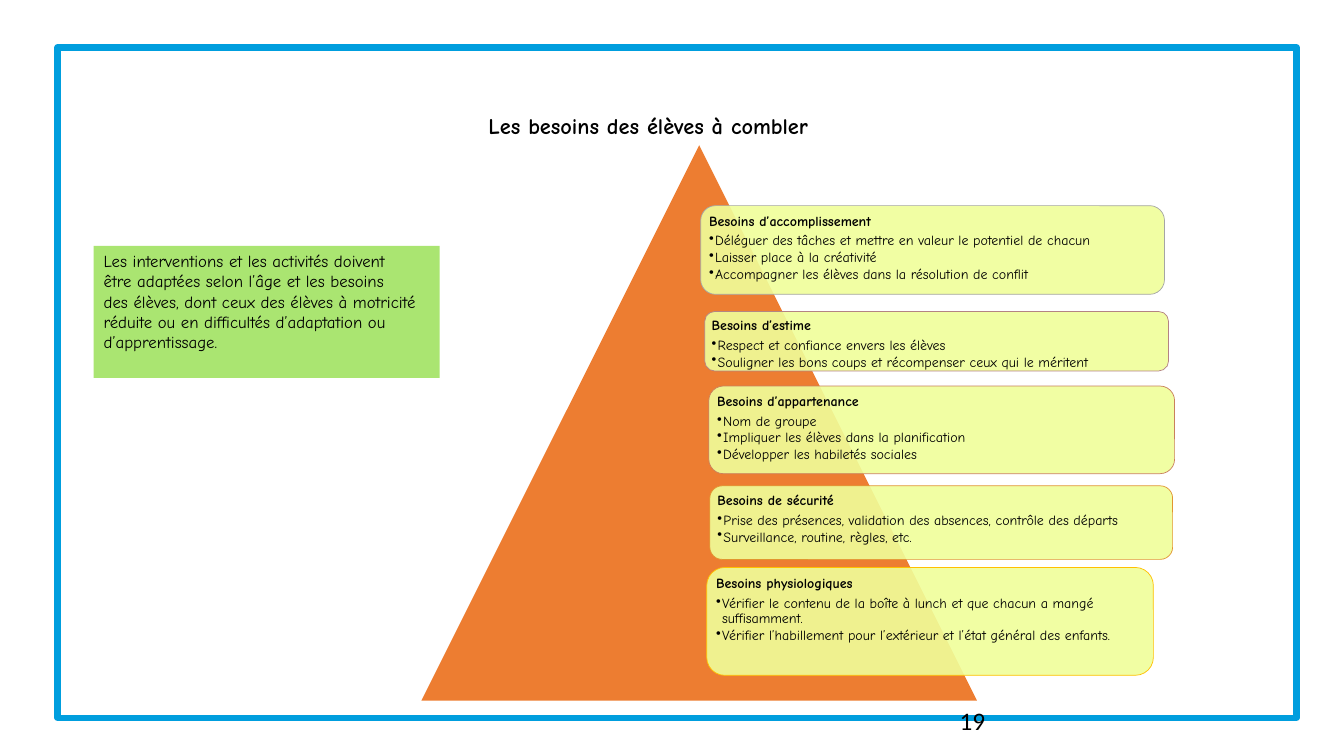
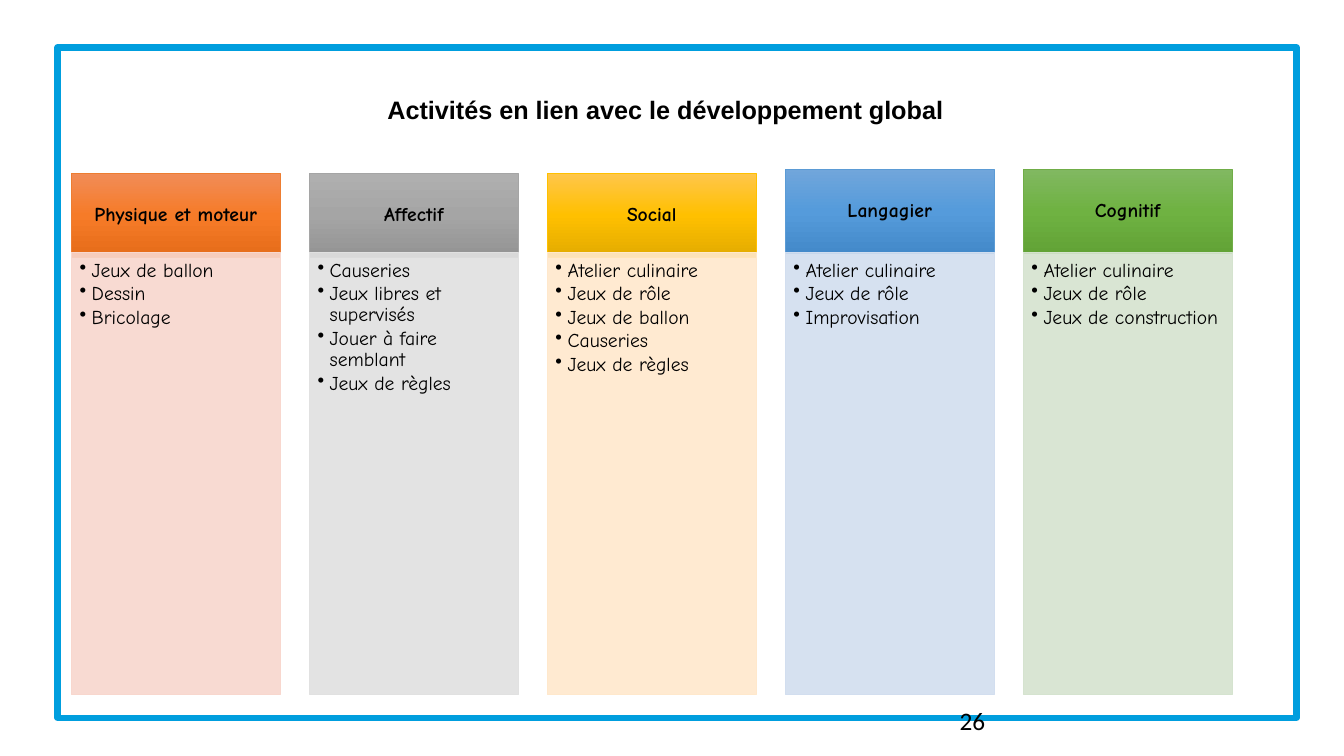
import copy

import pptx
import pptx.dml.color
import pptx.enum.shapes
import pptx.enum.text
import pptx.oxml.ns
import pptx.util
from lxml import etree

Inches = pptx.util.Inches
Pt = pptx.util.Pt
RGB = pptx.dml.color.RGBColor.from_string
SHAPE = pptx.enum.shapes.MSO_SHAPE
ALIGN = pptx.enum.text.PP_ALIGN
ANCHOR = pptx.enum.text.MSO_ANCHOR
qn = pptx.oxml.ns.qn


class Theme:
    font, title_font, number_font = "Comic Neue", "Arial", "Calibri"
    text, frame = "000000", "009EDE"
    pyramid, need, note = "ED7D31", "F0FE9A", "AAE571"
    need_size, note_size, column_size, number_size = 10, 12, 14, 18
    opacity = 90
    tight = 0.9
    after_heading, after_bullet = 0.32, 0.12  # share of the type size


def add_box(s, shape, at, fill=None, line=None, width=0.5, opacity=100,
            insets=(0.1, 0.05, 0.1, 0.05), anchor=ANCHOR.TOP):
    """Add a shape; fill is None, one colour, or a list of three for a vertical gradient."""
    sp = s.shapes.add_shape(shape, *map(Inches, at))
    sp.shadow.inherit = False
    if fill is None:
        sp.fill.background()
    elif isinstance(fill, str):
        sp.fill.solid()
        sp.fill.fore_color.rgb = RGB(fill)
    else:
        sp.fill.gradient()
        sp.fill.gradient_angle = 270
        stops = sp.element.spPr.find(".//" + qn("a:gsLst"))
        stops.insert(1, copy.deepcopy(stops[0]))
        for stop, position, color in zip(sp.fill.gradient_stops, (0, 0.5, 1), fill):
            stop.color.rgb = RGB(color)
            stop.position = position
    if opacity < 100:
        color = sp.element.spPr.find(qn("a:solidFill"))[0]
        etree.SubElement(color, qn("a:alpha"), val=str(opacity * 1000))
    if line:
        sp.line.color.rgb = RGB(line)
        sp.line.width = Pt(width)
    else:
        sp.line.fill.background()
    tf = sp.text_frame
    tf.word_wrap = True
    tf.vertical_anchor = anchor
    tf.margin_left, tf.margin_top, tf.margin_right, tf.margin_bottom = map(Inches, insets)
    return sp


def add_text(sp, text, size, font=Theme.font, bold=False, align=ALIGN.LEFT,
             spacing=1.0, after=0, bullet=0):
    """Add a paragraph; bullet is the hanging indent in inches, 0 for none."""
    tf = sp.text_frame
    p = tf.paragraphs[0] if not tf.text else tf.add_paragraph()
    p.alignment = align
    p.line_spacing = spacing
    p.space_after = Pt(round(after * size, 1))
    if bullet:
        pPr = p._p.get_or_add_pPr()
        pPr.set("marL", str(Inches(bullet)))
        pPr.set("indent", str(-Inches(bullet)))
        etree.SubElement(pPr, qn("a:buChar"), char="•")
    r = p.add_run()
    r.text = text
    r.font.name = font
    r.font.size = Pt(size)
    r.font.bold = bold
    r.font.color.rgb = RGB(Theme.text)


prs = pptx.Presentation()
prs.slide_width, prs.slide_height = Inches(13.33), Inches(7.5)

# Frame, title and number of each slide
pages = [
    ("Les besoins des élèves à combler", (0.45, 1.05), Theme.font, 16, "19"),
    ("Activités en lien avec le développement global", (0.62, 0.89), Theme.title_font, 18, "26"),
]
for title, corner, font, size, number in pages:
    s = prs.slides.add_slide(prs.slide_layouts[6])
    add_box(s, SHAPE.RECTANGLE, (0.57, 0.47, 12.29, 6.65), line=Theme.frame, width=4.5)
    sp = s.shapes.add_textbox(*map(Inches, (*corner, 11.96, 0.4)))
    sp.text_frame.word_wrap = True
    sp.text_frame.vertical_anchor = ANCHOR.MIDDLE
    add_text(sp, title, size, font=font, bold=True, align=ALIGN.CENTER)
    sp = s.shapes.add_textbox(*map(Inches, (9.42, 6.95, 3, 0.4)))
    sp.text_frame.word_wrap = True
    add_text(sp, number, Theme.number_size, font=Theme.number_font)
needs_slide, activities_slide = prs.slides

# Pyramid of needs
add_box(needs_slide, SHAPE.ISOSCELES_TRIANGLE, (4.18, 1.44, 5.51, 5.51), Theme.pyramid)
needs = [
    ("Besoins d’accomplissement", (6.95, 2.04, 4.6, 0.88), "A5A5A5", [
        "Déléguer des tâches et mettre en valeur le potentiel de chacun",
        "Laisser place à la créativité",
        "Accompagner les élèves dans la résolution de conflit"]),
    ("Besoins d’estime", (6.99, 3.09, 4.6, 0.59), "B48383", [
        "Respect et confiance envers les élèves",
        "Souligner les bons coups et récompenser ceux qui le méritent"]),
    ("Besoins d’appartenance", (7.03, 3.83, 4.62, 0.87), "C9805C", [
        "Nom de groupe",
        "Impliquer les élèves dans la planification",
        "Développer les habiletés sociales"]),
    ("Besoins de sécurité", (7.04, 4.82, 4.59, 0.73), "E19530", [
        "Prise des présences, validation des absences, contrôle des départs",
        "Surveillance, routine, règles, etc."]),
    ("Besoins physiologiques", (7.01, 5.63, 4.43, 1.07), "FFC000", [
        "Vérifier le contenu de la boîte à lunch et que chacun a mangé suffisamment.",
        "Vérifier l’habillement pour l’extérieur et l’état général des enfants."]),
]
for need, at, line, actions in needs:
    sp = add_box(needs_slide, SHAPE.ROUNDED_RECTANGLE, at, Theme.need, line,
                 opacity=Theme.opacity, insets=(0.04,) * 4)
    add_text(sp, need, Theme.need_size, bold=True, spacing=Theme.tight,
             after=Theme.after_heading)
    for action in actions:
        add_text(sp, action, Theme.need_size, spacing=Theme.tight,
                 after=Theme.after_bullet, bullet=0.06)

note = add_box(needs_slide, SHAPE.RECTANGLE, (0.93, 2.44, 3.43, 1.31), Theme.note)
for sentence_part in (
        "Les interventions et les activités doivent",
        "être adaptées selon l’âge et les besoins",
        "des élèves, dont ceux des élèves à motricité réduite ou en difficultés "
        "d’adaptation ou d’apprentissage."):
    add_text(note, sentence_part, Theme.note_size)

# Columns of activities
column_left, column_pitch, column_width = 0.71, 2.36, 2.07
columns = [
    ("Physique et moteur", 1.72, ["F18C57", "F67B28", "E56C19"], "ED7D31", "F8D7CE",
     ["Jeux de ballon", "Dessin", "Bricolage"]),
    ("Affectif", 1.72, ["AFAFAF", "A5A5A5", "939393"], "A5A5A5", "E1E1E1",
     ["Causeries", "Jeux libres et supervisés", "Jouer à faire semblant", "Jeux de règles"]),
    ("Social", 1.72, ["FFC64B", "FFC000", "E3AB00"], "FFC000", "FFE8CC",
     ["Atelier culinaire", "Jeux de rôle", "Jeux de ballon", "Causeries", "Jeux de règles"]),
    ("Langagier", 1.68, ["71A6DB", "559BDB", "448ACA"], "5B9BD5", "D2DEEF",
     ["Atelier culinaire", "Jeux de rôle", "Improvisation"]),
    ("Cognitif", 1.68, ["81B861", "6FB242", "62A336"], "70AD47", "D5E3CF",
     ["Atelier culinaire", "Jeux de rôle", "Jeux de construction"]),
]
for i, (domain, top, gradient, line, tint, activities) in enumerate(columns):
    left = column_left + i * column_pitch
    sp = add_box(activities_slide, SHAPE.RECTANGLE, (left, top, column_width, 0.83), gradient,
                 line, insets=(0.11, 0.06, 0.11, 0.06), anchor=ANCHOR.MIDDLE)
    add_text(sp, domain, Theme.column_size, bold=True, align=ALIGN.CENTER, spacing=Theme.tight)
    sp = add_box(activities_slide, SHAPE.RECTANGLE, (left, 2.5, column_width, 4.39), tint, tint,
                 opacity=Theme.opacity, insets=(0.08, 0.08, 0.11, 0.12))
    for activity in activities:
        add_text(sp, activity, Theme.column_size, spacing=Theme.tight,
                 after=Theme.after_bullet, bullet=0.12)

prs.save("out.pptx")
